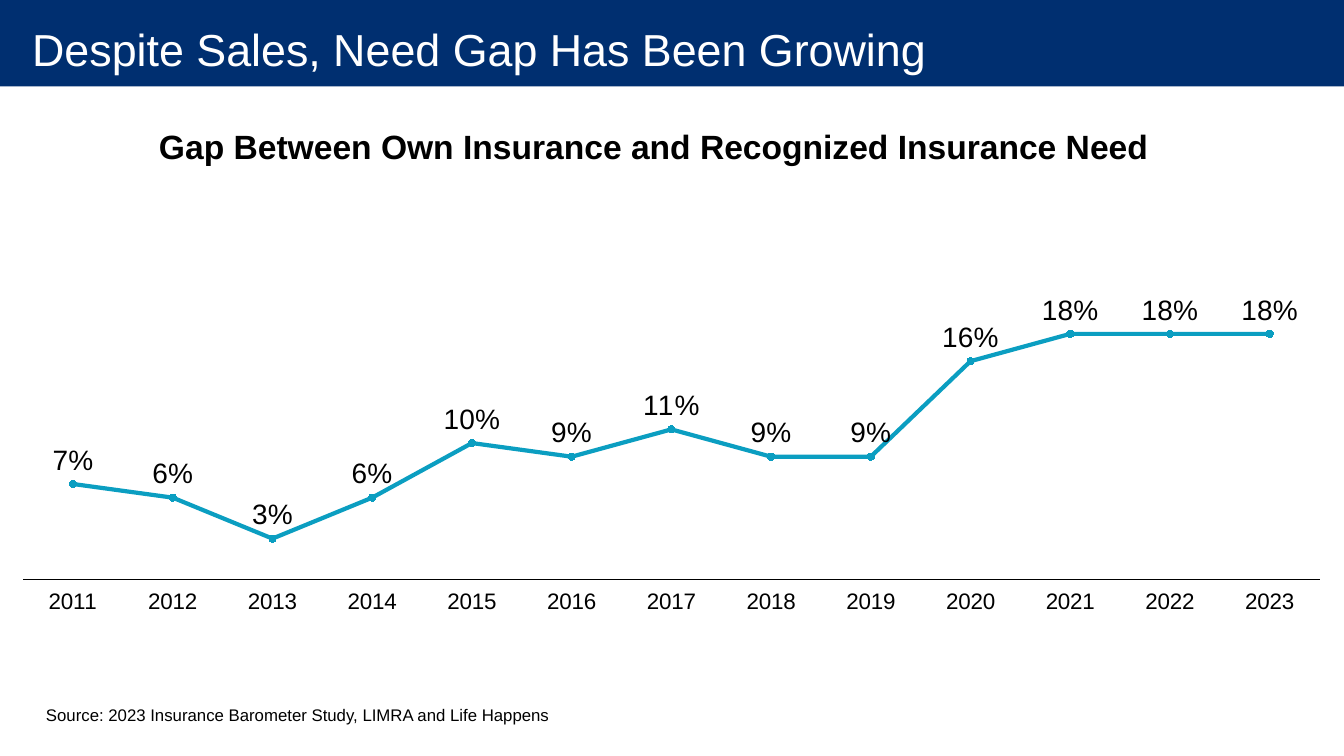
from dataclasses import dataclass

from lxml import etree
from pptx import Presentation
from pptx.chart.chart import Chart
from pptx.chart.data import CategoryChartData
from pptx.dml.color import RGBColor
from pptx.enum.chart import (XL_CHART_TYPE, XL_LABEL_POSITION, XL_MARKER_STYLE,
                             XL_TICK_LABEL_POSITION, XL_TICK_MARK)
from pptx.enum.shapes import MSO_SHAPE
from pptx.enum.text import MSO_ANCHOR, MSO_AUTO_SIZE, PP_ALIGN
from pptx.oxml.ns import qn
from pptx.util import Cm, Pt

LINE_MARKERS = XL_CHART_TYPE.LINE_MARKERS
LABEL_ABOVE = XL_LABEL_POSITION.ABOVE
CIRCLE = XL_MARKER_STYLE.CIRCLE
AXIS_LABELS_LOW = XL_TICK_LABEL_POSITION.LOW
NO_TICK = XL_TICK_MARK.NONE
RECTANGLE = MSO_SHAPE.RECTANGLE
TOP, MIDDLE = MSO_ANCHOR.TOP, MSO_ANCHOR.MIDDLE
NO_AUTOFIT = MSO_AUTO_SIZE.NONE
LEFT, CENTER = PP_ALIGN.LEFT, PP_ALIGN.CENTER

NAVY = RGBColor(0x00, 0x2F, 0x70)
TEAL = RGBColor(0x0B, 0x9E, 0xC1)
BLACK = RGBColor(0x00, 0x00, 0x00)
WHITE = RGBColor(0xFF, 0xFF, 0xFF)
FONT = "Arial"
TITLE_ONLY = 5

SLIDE_W, SLIDE_H = 33.87, 19.05
YEARS = range(2011, 2024)
GAP_PERCENT = (7, 6, 3, 6, 10, 9, 11, 9, 9, 16, 18, 18, 18)


@dataclass(frozen=True)
class Box:
    """A place on the slide, in centimetres."""
    left: float
    top: float
    width: float
    height: float

    def emu(self) -> tuple[Cm, Cm, Cm, Cm]:
        return Cm(self.left), Cm(self.top), Cm(self.width), Cm(self.height)


BAND = Box(0, 0, SLIDE_W, 2.18)
TITLE = Box(0.05, 0, SLIDE_W, 2.46)
CHART = Box(-2.82, -2.59, 36.22, 18.14)
HEADING = Box(-0.46, 3.05, SLIDE_W, 1.27)
SOURCE = Box(0.91, 17.63, 13.31, 0.76)
PLOT_LAYOUT = {"x": 0.094, "y": 0, "w": 0.902, "h": 0.948}


def format_font(font, size: float, color: RGBColor, bold: bool = False) -> None:
    font.name, font.size, font.bold = FONT, Pt(size), bold
    font.color.rgb = color


def write_text(sp, text: str, *, size: float, color: RGBColor = BLACK,
               bold: bool = False, align: PP_ALIGN = LEFT,
               anchor: MSO_ANCHOR = TOP, wrap: bool = True) -> None:
    tf = sp.text_frame
    tf.auto_size, tf.word_wrap, tf.vertical_anchor = NO_AUTOFIT, wrap, anchor
    p = tf.paragraphs[0]
    p.alignment = align
    r = p.add_run()
    r.text = text
    format_font(r.font, size, color, bold)


def add_band(slide) -> None:
    sp = slide.shapes.add_shape(RECTANGLE, *BAND.emu())
    sp.shadow.inherit = False
    sp.fill.solid()
    sp.fill.fore_color.rgb = NAVY
    sp.line.fill.background()


def fix_plot_area(chart: Chart) -> None:
    """Pin the inner plot area to fractions of the chart frame."""
    plot_area = chart._chartSpace.chart.plotArea
    for old in plot_area.findall(qn("c:layout")):
        plot_area.remove(old)
    layout = etree.Element(qn("c:layout"))
    manual = etree.SubElement(layout, qn("c:manualLayout"))
    settings = {"layoutTarget": "inner", "xMode": "edge", "yMode": "edge", **PLOT_LAYOUT}
    for name, value in settings.items():
        etree.SubElement(manual, qn(f"c:{name}")).set("val", str(value))
    plot_area.insert(0, layout)


def format_axes(chart: Chart) -> None:
    years, share = chart.category_axis, chart.value_axis
    years.major_tick_mark = years.minor_tick_mark = NO_TICK
    years.tick_label_position = AXIS_LABELS_LOW
    years.has_major_gridlines = False
    years.format.line.color.rgb = BLACK
    years.format.line.width = Pt(0.75)
    format_font(years.tick_labels.font, 16, BLACK)
    share.minimum_scale, share.maximum_scale = 0, 0.5
    share.has_major_gridlines = False
    share.visible = False


def format_gap_line(chart: Chart) -> None:
    plot = chart.plots[0]
    plot.vary_by_categories = False
    series = plot.series[0]
    series.smooth = False
    series.format.line.color.rgb = TEAL
    series.format.line.width = Pt(3)
    marker = series.marker
    marker.style, marker.size = CIRCLE, 5
    marker.format.fill.solid()
    marker.format.fill.fore_color.rgb = TEAL
    marker.format.line.color.rgb = TEAL
    labels = series.data_labels
    labels.show_value = True
    labels.position = LABEL_ABOVE
    labels.number_format, labels.number_format_is_linked = "0%", False
    format_font(labels.font, 20, BLACK)


def add_gap_chart(slide) -> None:
    data = CategoryChartData(number_format="0%")
    data.categories = [str(year) for year in YEARS]
    data.add_series("Series 1", [percent / 100 for percent in GAP_PERCENT])
    chart = slide.shapes.add_chart(LINE_MARKERS, *CHART.emu(), data).chart
    chart.has_title = chart.has_legend = False
    format_font(chart.font, 10, BLACK)
    fix_plot_area(chart)
    format_axes(chart)
    format_gap_line(chart)


def place_title(slide) -> None:
    """Fill the title placeholder and bring it in front of the band."""
    sp = slide.shapes.title
    sp.left, sp.top, sp.width, sp.height = TITLE.emu()
    tf = sp.text_frame
    tf.margin_left, tf.margin_right = Cm(0.76), Cm(0.51)
    tf.margin_top = tf.margin_bottom = 0
    write_text(sp, "Despite Sales, Need Gap Has Been Growing",
               size=32, color=WHITE, anchor=MIDDLE, wrap=False)
    slide.shapes._spTree.append(sp._element)


def main() -> None:
    prs = Presentation()
    prs.slide_width, prs.slide_height = Cm(SLIDE_W), Cm(SLIDE_H)
    slide = prs.slides.add_slide(prs.slide_layouts[TITLE_ONLY])
    add_band(slide)
    add_gap_chart(slide)
    place_title(slide)
    write_text(slide.shapes.add_textbox(*HEADING.emu()),
               "Gap Between Own Insurance and Recognized Insurance Need",
               size=24, bold=True, align=CENTER)
    write_text(slide.shapes.add_textbox(*SOURCE.emu()),
               "Source: 2023 Insurance Barometer Study, LIMRA and Life Happens",
               size=12, wrap=False)
    prs.save("out.pptx")


if __name__ == "__main__":
    main()
